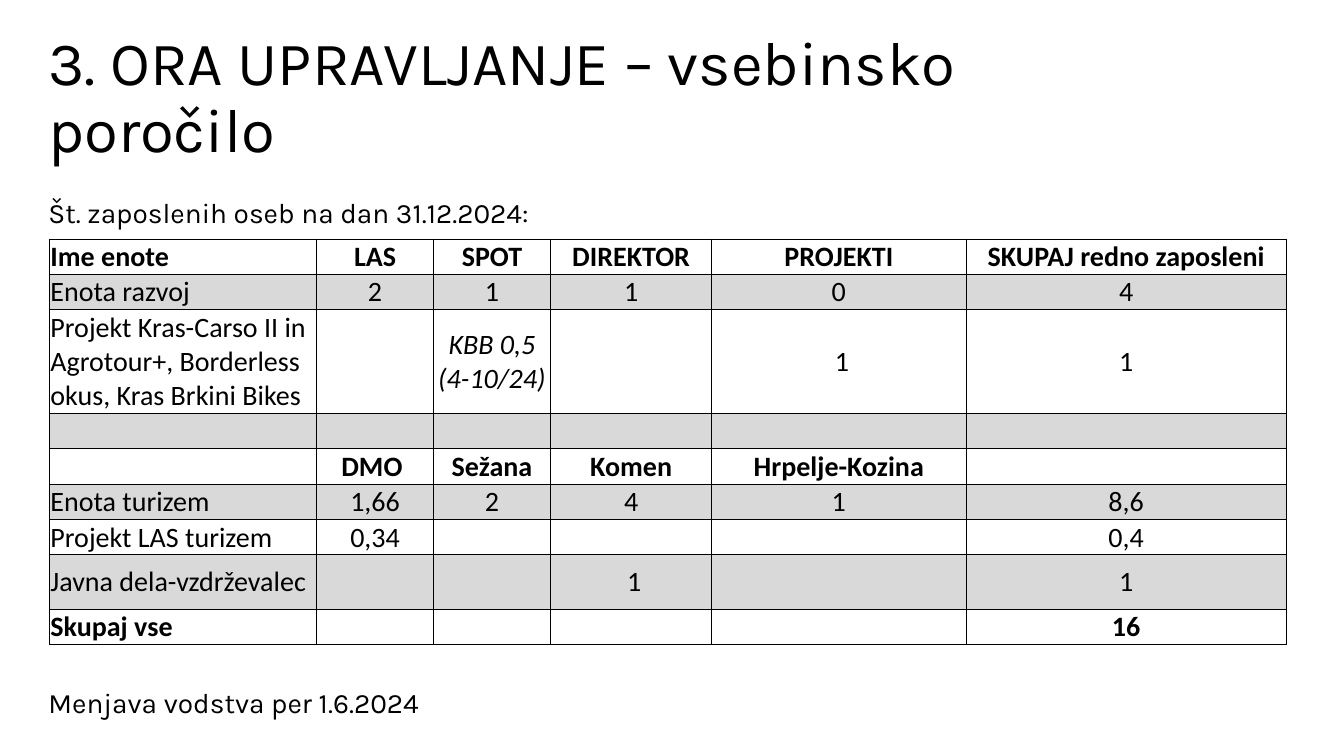
from dataclasses import dataclass

from lxml import etree
from pptx import Presentation, util as u
from pptx.dml.color import RGBColor
from pptx.enum import text as t
from pptx.oxml import ns

PX = 9144  # EMU per px, 100 px to the inch
HUES = {"ink": "000000", "band": "D9D9D9", "paper": "FFFFFF"}
COLS = [265, 116, 116, 160, 252, 318]
HIGH = [29, 29, 86, 29, 29, 29, 29, 54, 29]
BOLD = {0, 4, 8}  # heading and total rows
ITALIC = {(2, 2)}
STAFF = [
    ["Ime enote", "LAS", "SPOT", "DIREKTOR", "PROJEKTI",
     "SKUPAJ redno zaposleni"],
    ["Enota razvoj", "2", "1", "1", "0", "4"],
    ["Projekt Kras-Carso II in Agrotour+, Borderless okus, Kras Brkini Bikes",
     "", "KBB 0,5 (4-10/24)", "", " 1", "1"],
    [""] * 6,
    ["", "DMO ", "Sežana", "Komen", "Hrpelje-Kozina", ""],
    ["Enota turizem", "1,66", "2", "4", "1", "8,6"],
    ["Projekt LAS turizem", "0,34", "", "", "", "0,4"],
    ["Javna dela-vzdrževalec", "", "", " 1", "", "1"],
    ["Skupaj vse", "", "", "", "", "16"],
]


@dataclass
class Line:
    words: str
    before: int = 0


@dataclass
class Block:
    box: tuple[int, int, int, int]
    lines: list[Line]
    size: int
    pitch: float
    anchor: t.MSO_ANCHOR


HEAD = Block((38, 26, 1150, 145),
             [Line("3. ORA UPRAVLJANJE – vsebinsko poročilo")],
             44, 0.9, t.MSO_ANCHOR.MIDDLE)
BODY = Block((38, 195, 1150, 555),
             [Line("Št. zaposlenih oseb na dan 31.12.2024:"),
              Line("Menjava vodstva per 1.6.2024", 331)],
             20, 0.8, t.MSO_ANCHOR.TOP)


def apply(item, form: dict) -> None:
    for key, value in form.items():
        setattr(item, key, value)


def write(para, words: str, face: str, size: int, **style) -> None:
    run = para.add_run()
    run.text = words
    apply(run.font, {"name": face, "size": u.Pt(size), **style})
    run.font.color.rgb = RGBColor.from_string(HUES["ink"])


def fill_block(holder, block: Block) -> None:
    sides = ("left", "top", "width", "height")
    apply(holder, {side: n * PX for side, n in zip(sides, block.box)})
    frame = holder.text_frame
    apply(frame, {"word_wrap": True, "auto_size": t.MSO_AUTO_SIZE.NONE,
                  "vertical_anchor": block.anchor})
    for i, line in enumerate(block.lines):
        para = frame.add_paragraph() if i else frame.paragraphs[0]
        apply(para, {"alignment": t.PP_ALIGN.LEFT, "line_spacing": block.pitch,
                     "space_before": u.Pt(line.before)})
        props = para._p.get_or_add_pPr()
        apply_xml = {"marL": "0", "indent": "0"}
        for key, value in apply_xml.items():
            props.set(key, value)
        etree.SubElement(props, ns.qn("a:buNone"))
        write(para, line.words, "Karla", block.size)


def frame_cell(cell) -> None:
    props = cell._tc.get_or_add_tcPr()
    for side in ("lnL", "lnR", "lnT", "lnB"):
        edge = etree.SubElement(props, ns.qn(f"a:{side}"), w=str(u.Pt(0.5)))
        paint = etree.SubElement(edge, ns.qn("a:solidFill"))
        etree.SubElement(paint, ns.qn("a:srgbClr"), val=HUES["ink"])


def fill_cell(cell, row: int, col: int, words: str) -> None:
    apply(cell, {"margin_left": PX, "margin_top": PX, "margin_right": PX,
                 "margin_bottom": 0, "vertical_anchor": t.MSO_ANCHOR.MIDDLE})
    frame_cell(cell)
    cell.fill.solid()
    hue = HUES["band" if row % 2 else "paper"]
    cell.fill.fore_color.rgb = RGBColor.from_string(hue)
    para = cell.text_frame.paragraphs[0]
    para.alignment = t.PP_ALIGN.CENTER if col else t.PP_ALIGN.LEFT
    if words:
        write(para, words, "Calibri", 20, bold=row in BOLD,
              italic=(row, col) in ITALIC)
    else:
        para._p.get_or_add_endParaRPr().set("sz", "2000")


def add_staff(slide) -> None:
    place = (49, 237, sum(COLS), sum(HIGH))
    table = slide.shapes.add_table(len(HIGH), len(COLS),
                                   *(n * PX for n in place)).table
    apply(table, {"first_row": False, "horz_banding": False})
    for col, wide in zip(table.columns, COLS):
        col.width = wide * PX
    for row, high in zip(table.rows, HIGH):
        row.height = high * PX
    for r, row in enumerate(STAFF):
        for c, words in enumerate(row):
            fill_cell(table.cell(r, c), r, c, words)


def main() -> None:
    deck = Presentation()
    apply(deck, {"slide_width": 1333 * PX, "slide_height": 750 * PX})
    slide = deck.slides.add_slide(deck.slide_layouts[1])
    # Title and the lines around the table
    fill_block(slide.shapes.title, HEAD)
    fill_block(slide.placeholders[1], BODY)
    # Staff table
    add_staff(slide)
    deck.save("out.pptx")


if __name__ == "__main__":
    main()
